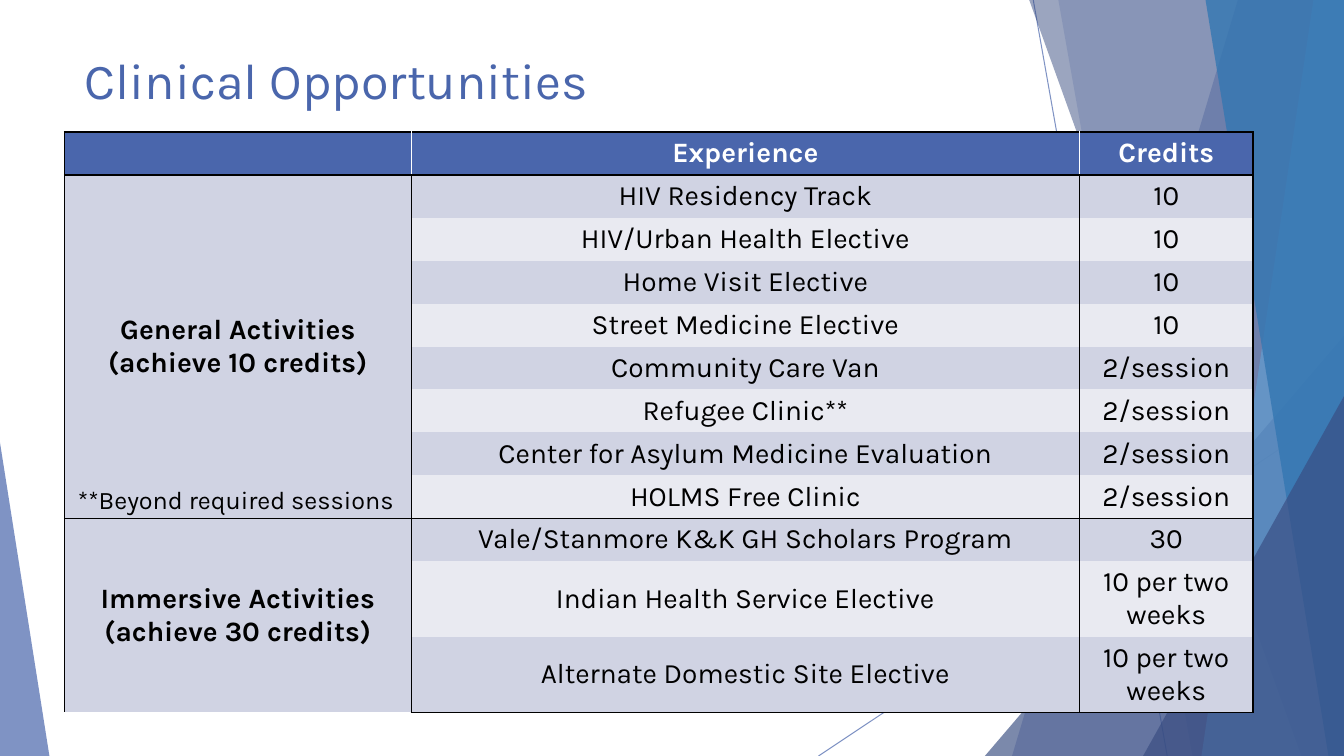
from dataclasses import dataclass

from lxml import etree
from pptx import Presentation
from pptx import util as u
from pptx.dml.color import RGBColor
from pptx.enum import shapes, text
from pptx.oxml import ns


@dataclass(frozen=True)
class Theme:
    font: str = "Karla"
    accent: str = "4A66AC"
    navy: str = "384C81"
    sky: str = "629DD1"
    ocean: str = "3477B2"
    band_dark: str = "D0D3E3"
    band_light: str = "E9EAF1"
    black: str = "000000"
    white: str = "FFFFFF"
    title: int = 36
    body: int = 20
    note: int = 18


THEME = Theme()
WIDTH, HEIGHT = u.Inches(13.333), u.Inches(7.5)


# Positions are percentages of the slide's width and height
def across(share: float) -> int:
    return round(WIDTH * share / 100)


def down(share: float) -> int:
    return round(HEIGHT * share / 100)


@dataclass(frozen=True)
class Ray:
    start: tuple[float, float]
    end: tuple[float, float]

    def draw(self, page) -> None:
        line = page.shapes.add_connector(
            shapes.MSO_CONNECTOR.STRAIGHT,
            across(self.start[0]), down(self.start[1]),
            across(self.end[0]), down(self.end[1]))
        line.line.color.rgb = RGBColor.from_string(THEME.accent)
        line.line.width = u.Pt(0.75)
        etree.SubElement(line._element.spPr, ns.qn("a:effectLst"))
        set_opacity(line, 70)


@dataclass(frozen=True)
class Wedge:
    """Full-height panel from a slanted left edge to the slide's right edge."""
    top: float
    bottom: float
    color: str
    opacity: int

    def draw(self, page) -> None:
        outline = page.shapes.build_freeform(across(self.top), 0)
        outline.add_line_segments([(WIDTH, 0), (WIDTH, HEIGHT), (across(self.bottom), HEIGHT)])
        paint(outline.convert_to_shape(), self.color, self.opacity)


@dataclass(frozen=True)
class Corner:
    """Triangle standing on the slide's bottom edge."""
    left: float
    top: float
    width: float
    peak: int
    color: str
    opacity: int

    def draw(self, page) -> None:
        triangle = page.shapes.add_shape(
            shapes.MSO_SHAPE.ISOSCELES_TRIANGLE, across(self.left), down(self.top),
            across(self.width), down(100 - self.top))
        triangle.adjustments[0] = self.peak
        paint(triangle, self.color, self.opacity)


@dataclass(frozen=True)
class Group:
    heading: str
    experiences: list[tuple[str, str]]


DECOR = [
    Ray((76.88, 0), (86.85, 100)),
    Ray((100, 53.73), (60.9, 100)),
    Wedge(92.1, 75.3, THEME.accent, 36),
    Wedge(78.75, 88.73, THEME.accent, 20),
    Corner(73.28, 44.4, 26.72, 1, THEME.navy, 66),
    Wedge(76.58, 96.83, THEME.navy, 50),
    Wedge(97.73, 89.4, THEME.sky, 70),
    Wedge(89.7, 98.85, THEME.ocean, 80),
    Corner(85.05, 52.4, 14.95, 1, THEME.navy, 66),
    Corner(0, 58.53, 3.68, 0, THEME.accent, 70),
]

HEADER = ["", "Experience", "Credits"]
GROUPS = [
    Group("General Activities\n(achieve 10 credits)", [
        ("HIV Residency Track", "10"),
        ("HIV/Urban Health Elective", "10"),
        ("Home Visit Elective", "10"),
        ("Street Medicine Elective", "10"),
        ("Community Care Van", "2/session"),
        ("Refugee Clinic**", "2/session"),
        ("Center for Asylum Medicine Evaluation", "2/session"),
        ("HOLMS Free Clinic", "2/session"),
    ]),
    Group("Immersive Activities\n(achieve 30 credits)", [
        ("Vale/Stanmore K&K GH Scholars Program", "30"),
        ("Indian Health Service Elective", "10 per two weeks"),
        ("Alternate Domestic Site Elective", "10 per two weeks"),
    ]),
]
COLUMNS = [25.8, 49.73, 12.9]
ROW, TALL_ROW = 5.33, 9.33


def set_opacity(shape, percent: int) -> None:
    for color in shape._element.xpath(".//a:solidFill/a:srgbClr"):
        etree.SubElement(color, ns.qn("a:alpha"), val=str(percent * 1000))


def paint(shape, color: str, opacity: int) -> None:
    shape.shadow.inherit = False
    shape.fill.solid()
    shape.fill.fore_color.rgb = RGBColor.from_string(color)
    shape.line.fill.background()
    set_opacity(shape, opacity)


def write(frame, words: str, size: int, color: str, bold: bool = False,
          align=text.PP_ALIGN.CENTER) -> None:
    frame.text = words
    style = {"name": THEME.font, "size": u.Pt(size), "bold": bold}
    for para in frame.paragraphs:
        para.alignment = align
        for span in para.runs:
            for name, value in style.items():
                setattr(span.font, name, value)
            span.font.color.rgb = RGBColor.from_string(color)


def set_border(cell, side: str, color: str | None) -> None:
    edge = etree.SubElement(cell._tc.get_or_add_tcPr(), ns.qn(f"a:ln{side}"), w=str(u.Pt(1)))
    if color is None:
        etree.SubElement(edge, ns.qn("a:noFill"))
    else:
        fill = etree.SubElement(edge, ns.qn("a:solidFill"))
        etree.SubElement(fill, ns.qn("a:srgbClr"), val=color)


def fill_cell(cell, words: str, row: int, column: int, first: bool, last: bool) -> None:
    header = row == 0
    inner = THEME.white if header else THEME.black
    borders = {
        "L": inner if column > 0 else THEME.black,
        "R": inner if column < len(COLUMNS) - 1 else THEME.black,
        "T": THEME.black if first else None,
        "B": THEME.black if last else None,
    }
    for side, color in borders.items():
        set_border(cell, side, color)
    light = column > 0 and row % 2 == 0
    shade = THEME.accent if header else THEME.band_light if light else THEME.band_dark
    cell.fill.solid()
    cell.fill.fore_color.rgb = RGBColor.from_string(shade)
    cell.vertical_anchor = text.MSO_ANCHOR.MIDDLE
    write(cell.text_frame, words, THEME.body, THEME.white if header else THEME.black,
          bold=header or column == 0)


def draw_table(page) -> None:
    heights = [ROW] * 10 + [TALL_ROW] * 2
    table = page.shapes.add_table(
        len(heights), len(COLUMNS), across(4.8), down(17.47),
        across(sum(COLUMNS)), down(sum(heights))).table
    for column, share in zip(table.columns, COLUMNS):
        column.width = across(share)
    for line, share in zip(table.rows, heights):
        line.height = down(share)

    for column, words in enumerate(HEADER):
        fill_cell(table.cell(0, column), words, 0, column, True, True)
    row = 1
    for group in GROUPS:
        final = len(group.experiences) - 1
        for index, experience in enumerate(group.experiences):
            heading = group.heading if index == 0 else ""
            for column, words in enumerate((heading, *experience)):
                fill_cell(table.cell(row + index, column), words, row + index, column,
                          index == 0, index == final)
        table.cell(row, 0).merge(table.cell(row + final, 0))
        row += final + 1


def main() -> None:
    deck = Presentation()
    deck.slide_width, deck.slide_height = WIDTH, HEIGHT
    page = deck.slides.add_slide(deck.slide_layouts[5])

    # Backdrop
    for item in DECOR:
        item.draw(page)

    # Title
    title = page.shapes.title
    place = {"left": across(5.55), "top": down(5.87), "width": across(70.5), "height": down(19.2)}
    for name, value in place.items():
        setattr(title, name, value)
    title.text_frame.vertical_anchor = text.MSO_ANCHOR.TOP
    write(title.text_frame, "Clinical Opportunities", THEME.title, THEME.accent,
          align=text.PP_ALIGN.LEFT)

    # Credits table and its footnote
    draw_table(page)
    note = page.shapes.add_textbox(across(4.43), down(63.47), across(26.25), down(5.33))
    note.text_frame.word_wrap = True
    write(note.text_frame, "**Beyond required sessions", THEME.note, THEME.black)

    deck.save("out.pptx")


if __name__ == "__main__":
    main()
